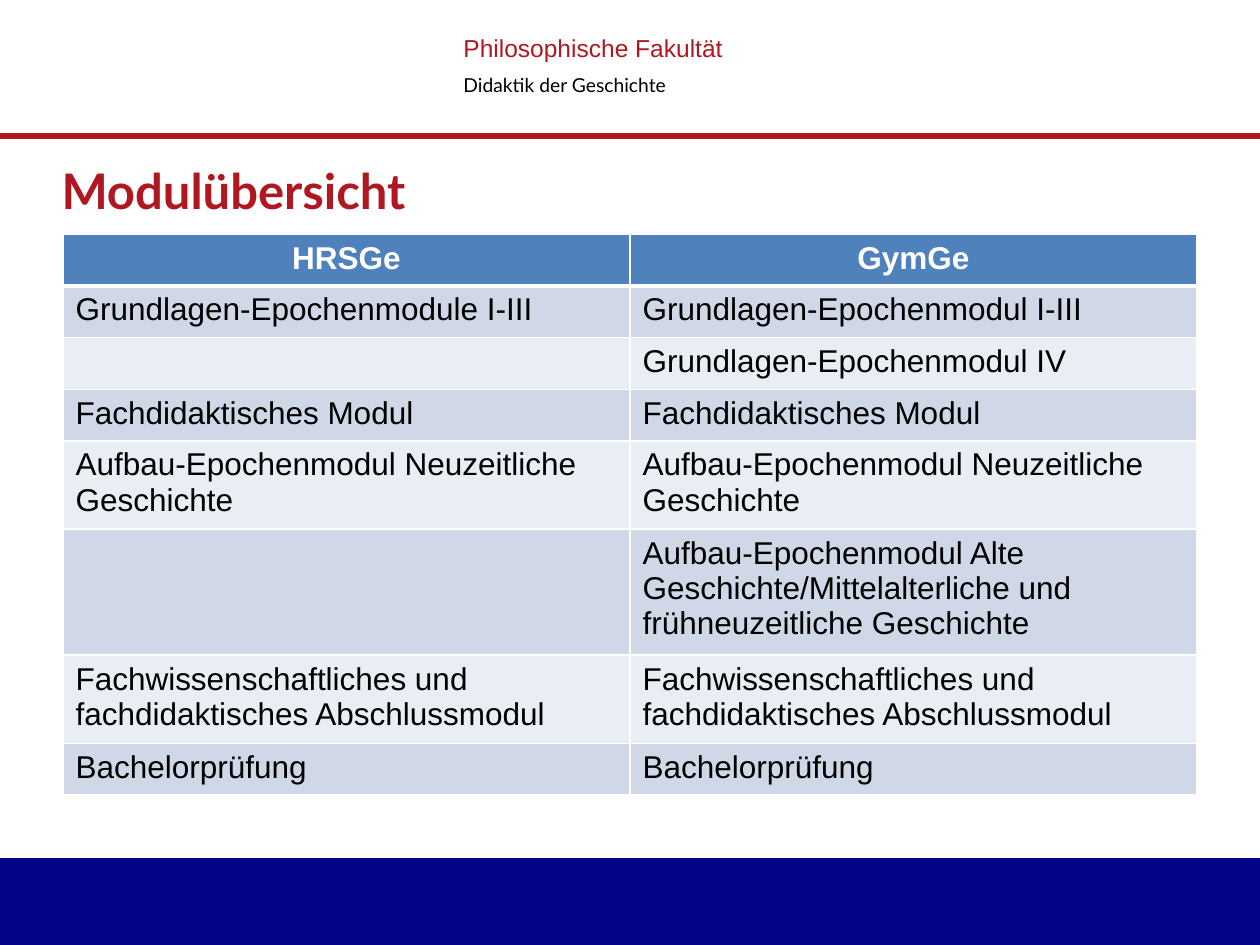
"""Build the module overview slide for the history teaching programme."""
from dataclasses import dataclass

from lxml import etree
from pptx import Presentation
from pptx.dml.color import RGBColor
from pptx.enum import shapes, text
from pptx.oxml import ns
from pptx.util import Inches, Pt

RED, NAVY, BLACK, WHITE = "AF1821", "030385", "000000", "FFFFFF"
HEADER_BLUE, BANDS = "4F81BD", ("D0D8E8", "E9EDF4")
ROW_HEIGHT, COLUMN_WIDTH = 0.41, 4.5


@dataclass(frozen=True)
class Style:
    font: str
    size: float
    color: str
    bold: bool = False


@dataclass(frozen=True)
class Line:
    words: str
    style: Style
    spacing: float = 1.0


@dataclass(frozen=True)
class Box:
    left: float
    top: float
    width: float
    height: float

    def lengths(self) -> tuple:
        return tuple(map(Inches, (self.left, self.top, self.width, self.height)))


HEAD = Style("Arial", 18, WHITE, True)
BODY = Style("Arial", 18, BLACK)

MODULES = [
    ("HRSGe", "GymGe"),
    ("Grundlagen-Epochenmodule I-III", "Grundlagen-Epochenmodul I-III"),
    ("", "Grundlagen-Epochenmodul IV"),
    ("Fachdidaktisches Modul",) * 2,
    ("Aufbau-Epochenmodul Neuzeitliche Geschichte",) * 2,
    ("", "Aufbau-Epochenmodul Alte Geschichte/Mittelalterliche und "
         "frühneuzeitliche Geschichte"),
    ("Fachwissenschaftliches und fachdidaktisches Abschlussmodul",) * 2,
    ("Bachelorprüfung",) * 2,
]


def rgb(value: str) -> RGBColor:
    return RGBColor.from_string(value)


def add_run(paragraph, words: str, style: Style) -> None:
    run = paragraph.add_run()
    run.text = words
    run.font.name, run.font.size = style.font, Pt(style.size)
    run.font.bold = style.bold
    run.font.color.rgb = rgb(style.color)


def add_text(slide, box: Box, lines: list[Line], anchor=text.MSO_ANCHOR.TOP) -> None:
    frame = slide.shapes.add_textbox(*box.lengths()).text_frame
    frame.word_wrap = True
    frame.vertical_anchor = anchor
    for index, line in enumerate(lines):
        paragraph = frame.add_paragraph() if index else frame.paragraphs[0]
        paragraph.line_spacing = line.spacing
        add_run(paragraph, line.words, line.style)


def add_footer(slide, box: Box) -> None:
    footer = slide.shapes.add_shape(shapes.MSO_SHAPE.RECTANGLE, *box.lengths())
    footer.shadow.inherit = False
    footer.fill.solid()
    footer.fill.fore_color.rgb = rgb(NAVY)
    footer.line.fill.background()


def add_rule(slide, top: float) -> None:
    rule = slide.shapes.add_connector(
        shapes.MSO_CONNECTOR.STRAIGHT, Inches(0), Inches(top), Inches(10), Inches(top))
    rule.line.color.rgb, rule.line.width = rgb(RED), Pt(3)
    etree.SubElement(rule._element.spPr, ns.qn("a:effectLst"))


def add_border(cell, side: str, width: float) -> None:
    border = etree.SubElement(
        cell._tc.get_or_add_tcPr(), ns.qn(f"a:ln{side}"), w=str(Pt(width)))
    fill = etree.SubElement(border, ns.qn("a:solidFill"))
    etree.SubElement(fill, ns.qn("a:srgbClr"), val=WHITE)


def fill_cell(cell, words: str, row: int) -> None:
    thick = {0: "B", 1: "T"}.get(row)
    for side in "LRTB":
        add_border(cell, side, 3 if side == thick else 1)
    cell.fill.solid()
    cell.fill.fore_color.rgb = rgb(BANDS[(row - 1) % 2] if row else HEADER_BLUE)
    paragraph = cell.text_frame.paragraphs[0]
    if row == 0:
        paragraph.alignment = text.PP_ALIGN.CENTER
    if words:
        add_run(paragraph, words, BODY if row else HEAD)


def add_modules(slide, left: float, top: float) -> None:
    rows, columns = len(MODULES), len(MODULES[0])
    box = Box(left, top, columns * COLUMN_WIDTH, rows * ROW_HEIGHT)
    table = slide.shapes.add_table(rows, columns, *box.lengths()).table
    for row, modules in enumerate(MODULES):
        for column, words in enumerate(modules):
            fill_cell(table.cell(row, column), words, row)


def main() -> None:
    deck = Presentation()
    deck.slide_width, deck.slide_height = Inches(10), Inches(7.5)
    slide = deck.slides.add_slide(deck.slide_layouts[6])
    add_footer(slide, Box(0, 6.81, 10, 0.69))
    add_rule(slide, 1.08)
    add_text(slide, Box(3.58, 0.21, 2.7, 0.61), [
        Line("Philosophische Fakultät", Style("Arial", 14, RED)),
        Line("Didaktik der Geschichte", Style("Lato", 11, BLACK), 1.5),
    ])
    add_text(slide, Box(0.39, 1.19, 9.02, 0.63),
             [Line("Modulübersicht", Style("Lato", 28, RED, True))],
             text.MSO_ANCHOR.MIDDLE)
    add_modules(slide, 0.5, 1.86)
    deck.save("out.pptx")


if __name__ == "__main__":
    main()
